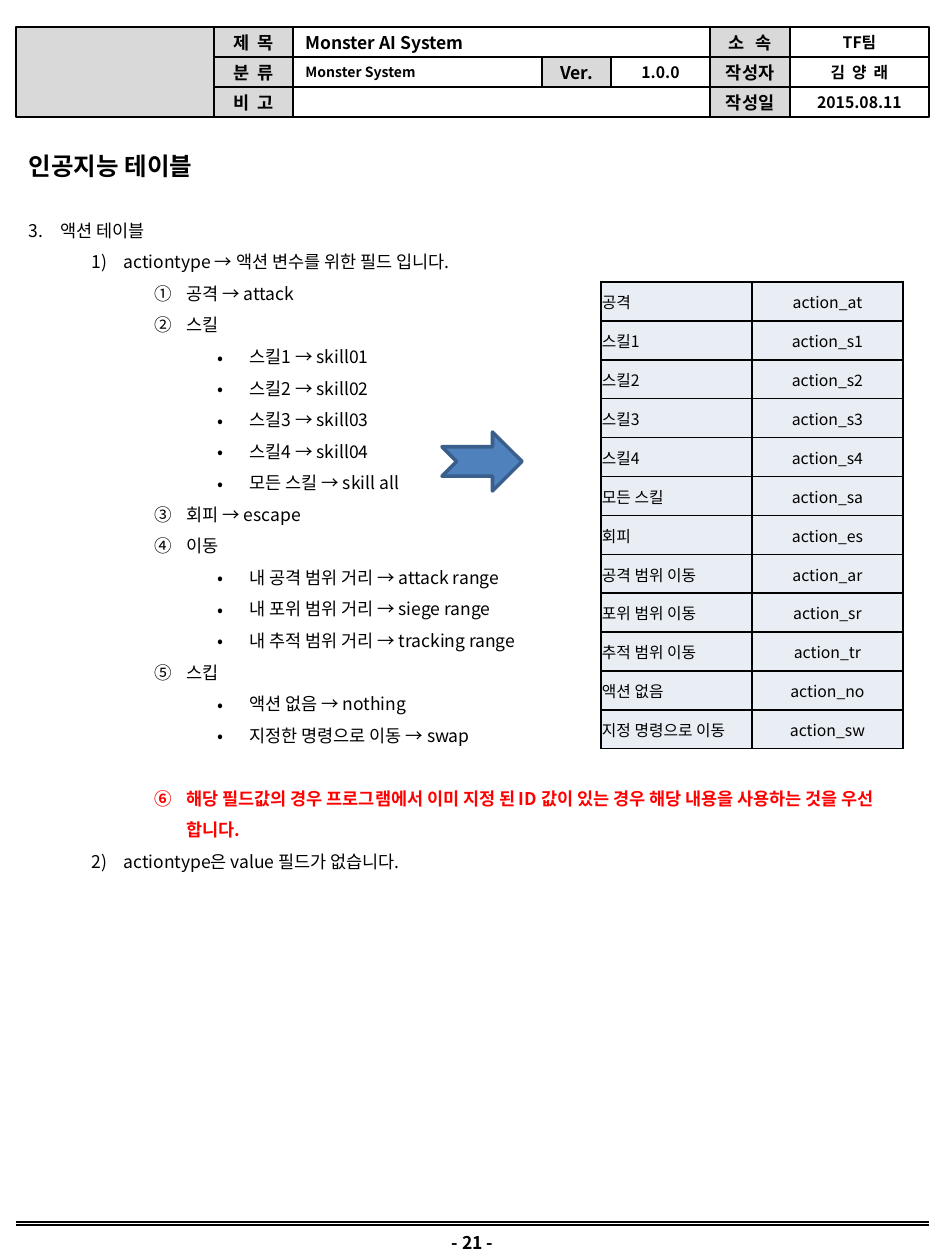
"""Build the action table page of the Monster AI System specification."""
from dataclasses import dataclass

from lxml import etree
from pptx import Presentation
from pptx.dml.color import RGBColor
from pptx.enum.shapes import MSO_CONNECTOR, MSO_SHAPE
from pptx.enum.text import MSO_ANCHOR, MSO_AUTO_SIZE, PP_ALIGN
from pptx.oxml.ns import qn
from pptx.util import Pt

EMU_PER_PX = 914400 / 126
LEFT, CENTER = PP_ALIGN.LEFT, PP_ALIGN.CENTER
MIDDLE, TOP = MSO_ANCHOR.MIDDLE, MSO_ANCHOR.TOP
NO_AUTOFIT = MSO_AUTO_SIZE.NONE
RECTANGLE, NOTCHED_ARROW = MSO_SHAPE.RECTANGLE, MSO_SHAPE.NOTCHED_RIGHT_ARROW
STRAIGHT = MSO_CONNECTOR.STRAIGHT


@dataclass(frozen=True)
class Theme:
    font: str = "Noto Sans CJK KR"
    ink: RGBColor = RGBColor(0, 0, 0)
    warning: RGBColor = RGBColor(0xFF, 0, 0)
    label_fill: RGBColor = RGBColor(0xD9, 0xD9, 0xD9)
    cell_fill: RGBColor = RGBColor(0xE9, 0xED, 0xF4)
    arrow_fill: RGBColor = RGBColor(0x4F, 0x81, 0xBD)
    arrow_line: RGBColor = RGBColor(0x3A, 0x5F, 0x8C)
    title_size: int = 14
    body_size: int = 10
    value_size: int = 9
    small_size: int = 8


@dataclass(frozen=True)
class HeaderCell:
    first_column: int
    last_column: int
    row: int
    text: str = ""
    size: int = 10
    is_label: bool = False
    align: PP_ALIGN = CENTER
    tracking: int = 0
    row_span: int = 1


@dataclass(frozen=True)
class Item:
    level: int
    text: str
    is_warning: bool = False


THEME = Theme()
COLUMN_EDGES = (16, 214, 293, 542, 611, 710, 790, 929)
HEADER_TOP, HEADER_ROW = 27, 30
HANGING, LEVEL_STEP = 32, 63
MARKERS = (
    ("buAutoNum", {"type": "arabicPeriod", "startAt": "3"}),
    ("buAutoNum", {"type": "arabicParenR"}),
    ("buAutoNum", {"type": "circleNumDbPlain"}),
    ("buChar", {"char": "•"}),
)
HEADER = (
    HeaderCell(0, 1, 0, is_label=True, row_span=3),
    HeaderCell(1, 2, 0, "제 목", is_label=True, tracking=110),
    HeaderCell(1, 2, 1, "분 류", is_label=True, tracking=110),
    HeaderCell(1, 2, 2, "비 고", is_label=True, tracking=110),
    HeaderCell(2, 5, 0, "Monster AI System", align=LEFT),
    HeaderCell(2, 3, 1, "Monster System", THEME.small_size, align=LEFT),
    HeaderCell(3, 4, 1, "Ver.", is_label=True),
    HeaderCell(4, 5, 1, "1.0.0", THEME.value_size),
    HeaderCell(2, 5, 2),
    HeaderCell(5, 6, 0, "소 속", is_label=True, tracking=225),
    HeaderCell(5, 6, 1, "작성자", is_label=True),
    HeaderCell(5, 6, 2, "작성일", is_label=True),
    HeaderCell(6, 7, 0, "TF팀", THEME.value_size),
    HeaderCell(6, 7, 1, "김 양 래", THEME.value_size, tracking=100),
    HeaderCell(6, 7, 2, "2015.08.11", THEME.value_size),
)
ITEMS = (
    Item(0, "액션 테이블"),
    Item(1, "actiontype → 액션 변수를 위한 필드 입니다."),
    Item(2, "공격 → attack"),
    Item(2, "스킬"),
    Item(3, "스킬1 → skill01"),
    Item(3, "스킬2 → skill02"),
    Item(3, "스킬3 → skill03"),
    Item(3, "스킬4 → skill04"),
    Item(3, "모든 스킬 → skill all"),
    Item(2, "회피 → escape"),
    Item(2, "이동"),
    Item(3, "내 공격 범위 거리 → attack range"),
    Item(3, "내 포위 범위 거리 → siege range"),
    Item(3, "내 추적 범위 거리 → tracking range"),
    Item(2, "스킵"),
    Item(3, "액션 없음 → nothing"),
    Item(3, "지정한 명령으로 이동 → swap"),
    Item(2, "해당 필드값의 경우 프로그램에서 이미 지정 된 ID 값이 있는 경우 "
            "해당 내용을 사용하는 것을 우선 합니다.", is_warning=True),
    Item(1, "actiontype은 value 필드가 없습니다."),
)
ACTIONS = (
    ("공격", "action_at"), ("스킬1", "action_s1"), ("스킬2", "action_s2"),
    ("스킬3", "action_s3"), ("스킬4", "action_s4"), ("모든 스킬", "action_sa"),
    ("회피", "action_es"), ("공격 범위 이동", "action_ar"), ("포위 범위 이동", "action_sr"),
    ("추적 범위 이동", "action_tr"), ("액션 없음", "action_no"), ("지정 명령으로 이동", "action_sw"),
)


def px(length: int) -> int:
    return round(length * EMU_PER_PX)


def box(*lengths: int) -> list[int]:
    return [px(length) for length in lengths]


def format_paragraph(paragraph, size: int, bold: bool = False, align: PP_ALIGN = LEFT,
                     color: RGBColor = THEME.ink, tracking: int = 0) -> None:
    paragraph.alignment = align
    font = paragraph.font
    font.name, font.size, font.bold = THEME.font, Pt(size), bold
    font.color.rgb = color
    etree.SubElement(font._element, qn("a:ea"), typeface=THEME.font)
    if tracking:
        font._element.set("spc", str(tracking))


def place(shape, left: int, top: int, width: int, height: int, anchor: MSO_ANCHOR):
    shape.left, shape.top, shape.width, shape.height = box(left, top, width, height)
    frame = shape.text_frame
    frame.word_wrap, frame.auto_size, frame.vertical_anchor = True, NO_AUTOFIT, anchor
    return frame


def draw_header_cell(slide, cell: HeaderCell) -> None:
    left, right = COLUMN_EDGES[cell.first_column], COLUMN_EDGES[cell.last_column]
    shape = slide.shapes.add_shape(RECTANGLE, *box(
        left, HEADER_TOP + cell.row * HEADER_ROW, right - left, cell.row_span * HEADER_ROW))
    shape.shadow.inherit = False
    shape.line.color.rgb, shape.line.width = THEME.ink, Pt(1.5)
    if cell.is_label:
        shape.fill.solid()
        shape.fill.fore_color.rgb = THEME.label_fill
    else:
        shape.fill.background()
    if cell.text:
        shape.text_frame.vertical_anchor = MIDDLE
        paragraph = shape.text_frame.paragraphs[0]
        paragraph.text = cell.text
        format_paragraph(paragraph, cell.size, True, cell.align, tracking=cell.tracking)


def draw_footer(slide) -> None:
    for y in (1222, 1225):
        line = slide.shapes.add_connector(
            STRAIGHT, *box(COLUMN_EDGES[0], y, COLUMN_EDGES[-1], y))
        line.line.color.rgb, line.line.width = THEME.ink, Pt(1)
        etree.SubElement(line._element.spPr, qn("a:effectLst"))
    number = slide.shapes.add_textbox(0, 0, 0, 0)
    paragraph = place(number, 423, 1225, 99, 35, MIDDLE).paragraphs[0]
    paragraph.text = "- 21 -"
    format_paragraph(paragraph, THEME.body_size, True, CENTER)


def fill_item(paragraph, item: Item) -> None:
    paragraph.text, paragraph.level = item.text, item.level
    paragraph.line_spacing = 1.5
    paragraph.space_before = Pt(18 if item.is_warning else 0)
    properties = paragraph._p.get_or_add_pPr()
    properties.set("marL", str(px(HANGING + item.level * LEVEL_STEP)))
    properties.set("indent", str(-px(HANGING)))
    etree.SubElement(properties, qn("a:buFont"), typeface=THEME.font)
    tag, attributes = MARKERS[item.level]
    etree.SubElement(properties, qn(f"a:{tag}"), attributes)
    format_paragraph(paragraph, THEME.body_size, item.is_warning,
                     color=THEME.warning if item.is_warning else THEME.ink)


def fill_table_cell(cell, text: str, align: PP_ALIGN) -> None:
    cell.margin_left = cell.margin_top = cell.margin_right = px(1)
    cell.margin_bottom = 0
    cell.vertical_anchor = MIDDLE
    properties = cell._tc.get_or_add_tcPr()
    for side in ("lnL", "lnR", "lnT", "lnB"):
        border = etree.SubElement(properties, qn(f"a:{side}"), w=str(Pt(1)))
        solid = etree.SubElement(border, qn("a:solidFill"))
        etree.SubElement(solid, qn("a:srgbClr"), val=str(THEME.ink))
    cell.fill.solid()
    cell.fill.fore_color.rgb = THEME.cell_fill
    paragraph = cell.text_frame.paragraphs[0]
    paragraph.text = text
    format_paragraph(paragraph, THEME.value_size, align=align)


def draw_action_table(slide) -> None:
    table = slide.shapes.add_table(len(ACTIONS), 2, *box(601, 282, 302, 467)).table
    table.first_row = table.horz_banding = False
    for row, texts in enumerate(ACTIONS):
        for column, (text, align) in enumerate(zip(texts, (LEFT, CENTER))):
            fill_table_cell(table.cell(row, column), text, align)


def draw_arrow(slide) -> None:
    arrow = slide.shapes.add_shape(NOTCHED_ARROW, *box(442, 432, 80, 59))
    arrow.shadow.inherit = False
    arrow.fill.solid()
    arrow.fill.fore_color.rgb = THEME.arrow_fill
    arrow.line.color.rgb, arrow.line.width = THEME.arrow_line, Pt(2)


def main() -> None:
    presentation = Presentation()
    presentation.slide_width, presentation.slide_height = box(945, 1260)
    slide = presentation.slides.add_slide(presentation.slide_layouts[1])
    for cell in HEADER:
        draw_header_cell(slide, cell)
    draw_footer(slide)
    title, body = slide.placeholders
    heading = place(title, 16, 134, 912, 49, MIDDLE).paragraphs[0]
    heading.text, heading.line_spacing = "인공지능 테이블", 1.5
    format_paragraph(heading, THEME.title_size, True)
    frame = place(body, 16, 203, 912, 1002, TOP)
    for index, item in enumerate(ITEMS):
        fill_item(frame.add_paragraph() if index else frame.paragraphs[0], item)
    draw_action_table(slide)
    draw_arrow(slide)
    presentation.save("out.pptx")


if __name__ == "__main__":
    main()
